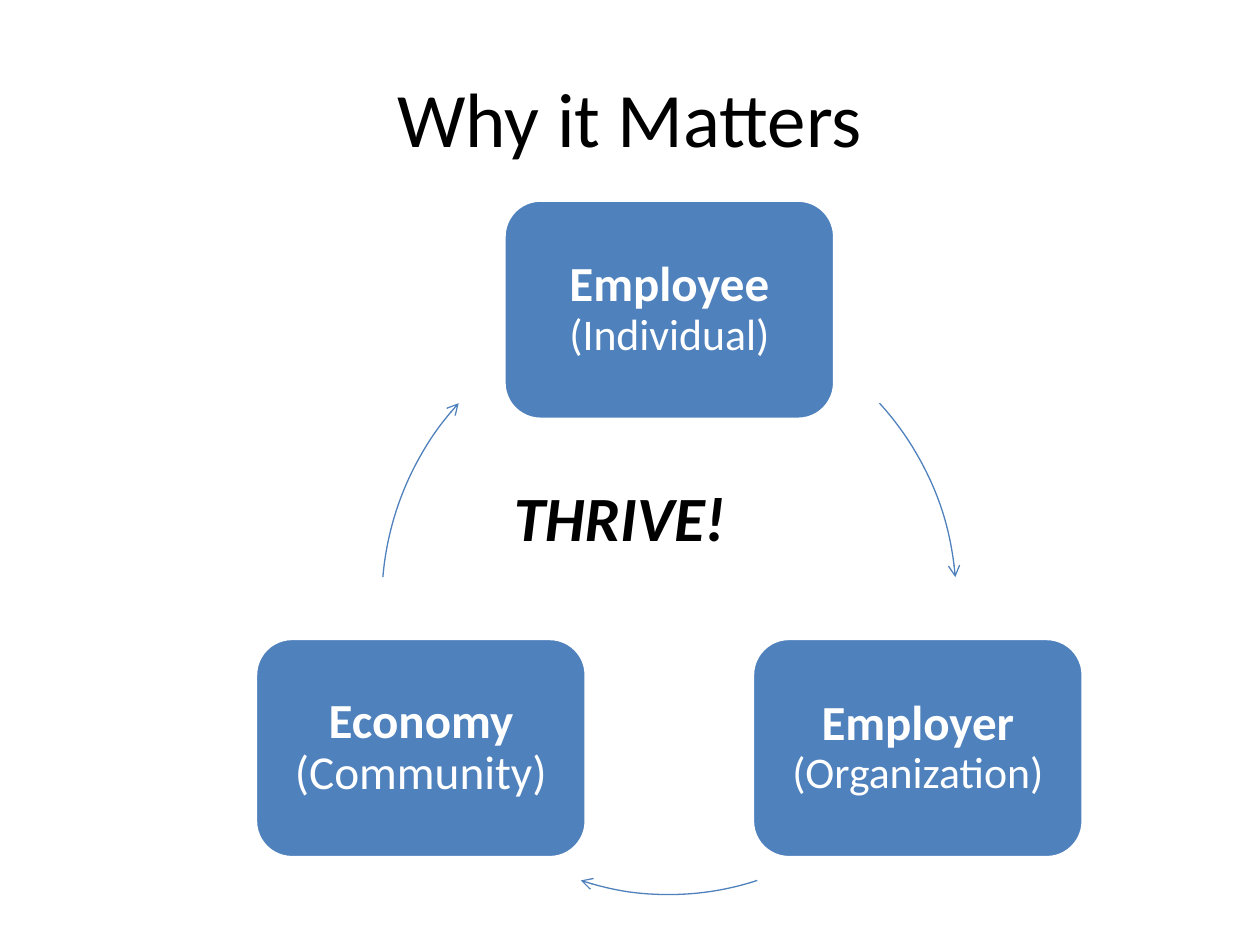
"""Build the "Why it Matters" cycle slide."""
from lxml import etree
from pptx import Presentation
from pptx import util as u
from pptx.dml.color import RGBColor
from pptx.enum import shapes, text
from pptx.oxml.ns import qn

COLORS = {"blue": "4F81BD", "white": "FFFFFF", "black": "000000"}
FONT = "Calibri"
LABELS = [
    ("Why it Matters", (36, 21.6, 648, 90), 44, False, text.PP_ALIGN.CENTER, text.MSO_ANCHOR.MIDDLE),
    ("THRIVE!", (286.56, 270, 175.68, 51), 36, True, text.PP_ALIGN.LEFT, text.MSO_ANCHOR.TOP),
]
NODES = [
    ("Employee ", "(Individual)", 25, (382.5, 177)),
    ("Employer ", "(Organization)", 25, (524.5, 427.5)),
    ("Economy ", "(Community)", 27, (240.5, 427.5)),
]
NODE_WIDTH, NODE_HEIGHT, NODE_INSET = 189, 125.28, 14.6
CYCLE_BOX = (218.2, 177.1, 328.3, 334.1)
ARCS = [(316.6, 355), (72.4, 107.6), (185, 223.4)]
DEGREE = 0.6


def color(name):
    return RGBColor.from_string(COLORS[name])


def points(box):
    return [u.Pt(value) for value in box]


def style(font, size, name, bold=False, italic=False):
    font.name, font.size, font.bold, font.italic = FONT, u.Pt(size), bold, italic
    font.color.rgb = color(name)


def add_label(slide, words, box, size, emphasis, align, anchor):
    frame = slide.shapes.add_textbox(*points(box)).text_frame
    frame.word_wrap, frame.vertical_anchor = True, anchor
    paragraph = frame.paragraphs[0]
    paragraph.text, paragraph.alignment = words, align
    style(paragraph.font, size, "black", emphasis, emphasis)


def add_node(slide, heading, detail, detail_size, center):
    box = (center[0] - NODE_WIDTH / 2, center[1] - NODE_HEIGHT / 2, NODE_WIDTH, NODE_HEIGHT)
    shape = slide.shapes.add_shape(shapes.MSO_SHAPE.ROUNDED_RECTANGLE, *points(box))
    shape.shadow.inherit = False
    shape.fill.solid()
    shape.fill.fore_color.rgb = color("blue")
    shape.line.color.rgb = color("white")
    shape.line.width = u.Pt(2)
    frame = shape.text_frame
    frame.word_wrap, frame.vertical_anchor = True, text.MSO_ANCHOR.MIDDLE
    frame.margin_left = frame.margin_right = u.Pt(NODE_INSET)
    frame.margin_top = frame.margin_bottom = u.Pt(NODE_INSET)
    paragraph = frame.paragraphs[0]
    paragraph.alignment, paragraph.line_spacing = text.PP_ALIGN.CENTER, 0.9
    for words, size, bold in ((heading, 28, True), (detail, detail_size, False)):
        run = paragraph.add_run()
        run.text = words
        style(run.font, size, "white", bold)


def add_arc(slide, start, end):
    arc = slide.shapes.add_shape(shapes.MSO_SHAPE.ARC, *points(CYCLE_BOX))
    arc.shadow.inherit = False
    arc.adjustments[0], arc.adjustments[1] = start * DEGREE, end * DEGREE
    arc.fill.background()
    arc.line.color.rgb = color("blue")
    arc.line.width = u.Pt(0.75)
    line = arc.line._get_or_add_ln()
    etree.SubElement(line, qn("a:tailEnd"), type="arrow")


def main():
    presentation = Presentation()
    presentation.slide_width, presentation.slide_height = u.Pt(720), u.Pt(540)
    slide = presentation.slides.add_slide(presentation.slide_layouts[6])
    for node, arc in zip(NODES, ARCS):
        add_node(slide, *node)
        add_arc(slide, *arc)
    for label in LABELS:
        add_label(slide, *label)
    presentation.save("out.pptx")


if __name__ == "__main__":
    main()
